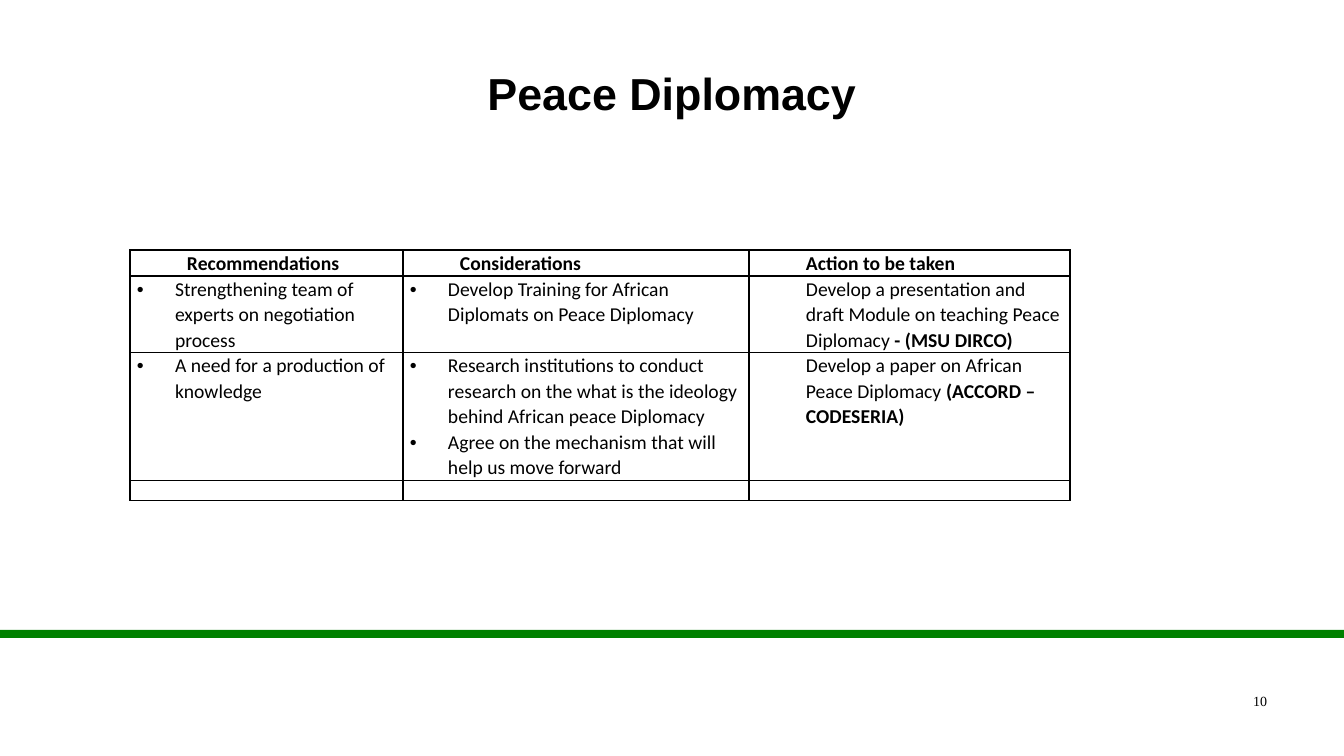
from lxml import etree
from pptx import Presentation
from pptx.dml.color import RGBColor
from pptx.enum import shapes, text
from pptx.oxml import ns
from pptx.util import Pt

PX = 9071.43  # EMU in one px, at 100.8 px to the inch


def px(*lengths):
    return [round(length * PX) for length in lengths]


def add_run(paragraph, words, size, font, bold=False):
    run = paragraph.add_run()
    run.text = words
    run.font.size, run.font.name, run.font.bold = Pt(size), font, bold
    run.font.color.rgb = RGBColor.from_string("000000")


deck = Presentation()
deck.slide_width, deck.slide_height = px(1344, 756)
slide = deck.slides.add_slide(deck.slide_layouts[5])

title = slide.shapes.title
title.left, title.top, title.width, title.height = px(67, 30, 1210, 126)
title.text_frame.vertical_anchor = text.MSO_ANCHOR.MIDDLE
heading = title.text_frame.paragraphs[0]
heading.alignment = text.PP_ALIGN.CENTER
add_run(heading, "Peace Diplomacy", 32, "Arial", True)

green_bar = slide.shapes.add_shape(shapes.MSO_SHAPE.RECTANGLE, *px(0, 630, 1344, 8))
green_bar.shadow.inherit = False
green_bar.fill.solid()
green_bar.fill.fore_color.rgb = RGBColor.from_string("008000")
green_bar.line.fill.background()

# Each cell is a list of paragraphs: (bulleted, regular words, bold words)
rows = [
    [[(False, "", "Recommendations")],
     [(False, "", "Considerations")],
     [(False, "", "Action to be taken")]],
    [[(True, "Strengthening team of experts on negotiation process", "")],
     [(True, "Develop Training for African Diplomats on Peace Diplomacy", "")],
     [(False, "Develop a presentation and draft Module on teaching Peace Diplomacy",
       " - (MSU DIRCO)")]],
    [[(True, "A need for a production of knowledge", "")],
     [(True, "Research institutions to conduct research on the what is the ideology "
       "behind African peace Diplomacy", ""),
      (True, "Agree on the mechanism that will help us move forward", "")],
     [(False, "Develop a paper on African Peace Diplomacy", " (ACCORD – CODESERIA)")]],
    [[(True, "", "")], [(True, "", "")], [(False, "", "")]],
]
column_widths = px(273, 346, 321)
row_heights = px(26, 76, 128, 20)
plan = slide.shapes.add_table(4, 3, *px(130, 250, 940, 250)).table
plan.first_row = plan.horz_banding = False
for column, width in zip(plan.columns, column_widths):
    column.width = width
for row, height in zip(plan.rows, row_heights):
    row.height = height

for r, row in enumerate(rows):
    for c, entries in enumerate(row):
        cell = plan.cell(r, c)
        cell.margin_left, cell.margin_right, cell.margin_top, cell.margin_bottom = px(7, 7, 0, 0)
        for side in ("a:lnL", "a:lnR", "a:lnT", "a:lnB"):
            border = etree.SubElement(cell._tc.get_or_add_tcPr(), ns.qn(side), w=str(Pt(1)))
            border_fill = etree.SubElement(border, ns.qn("a:solidFill"))
            etree.SubElement(border_fill, ns.qn("a:srgbClr"), val="000000")
        cell.fill.background()
        for i, (bulleted, regular, bold) in enumerate(entries):
            paragraph = cell.text_frame.paragraphs[0] if i == 0 else cell.text_frame.add_paragraph()
            paragraph.line_spacing = 1.07
            properties = paragraph._p.get_or_add_pPr()
            left, hanging = px(38, -38) if bulleted else px(50, 0)
            properties.set("marL", str(left))
            properties.set("indent", str(hanging))
            if bulleted:
                etree.SubElement(properties, ns.qn("a:buFont"), typeface="Arial")
                etree.SubElement(properties, ns.qn("a:buChar"), char="•")
            for words, is_bold in ((regular, False), (bold, True)):
                if words:
                    add_run(paragraph, words, 14, "Calibri", is_bold)
            if not regular and not bold:
                end = etree.SubElement(paragraph._p, ns.qn("a:endParaRPr"), sz="1100")
                etree.SubElement(end, ns.qn("a:latin"), typeface="Calibri")

page_number = slide.shapes.add_textbox(*px(964, 688, 313, 52)).text_frame
page_number.word_wrap = True
page_number.paragraphs[0].alignment = text.PP_ALIGN.RIGHT
add_run(page_number.paragraphs[0], "10", 10, "Times New Roman")

deck.save("out.pptx")
